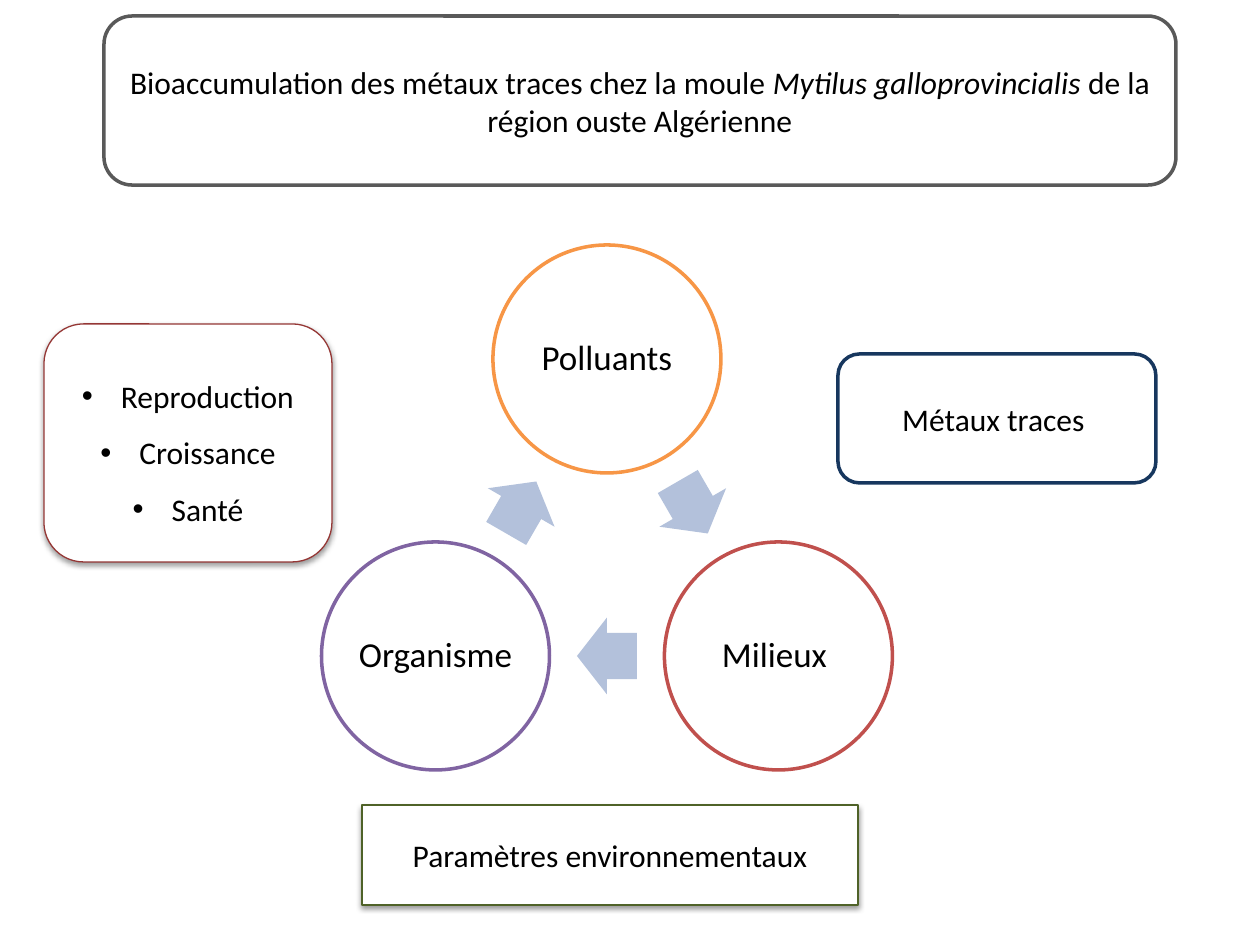
import math
from dataclasses import dataclass

import lxml.etree
import pptx
import pptx.dml.color
import pptx.enum.shapes
import pptx.enum.text
import pptx.oxml
import pptx.oxml.ns
import pptx.util

EMU_PER_PX = 914400 / 126
SHAPES = pptx.enum.shapes.MSO_SHAPE


@dataclass(frozen=True)
class Theme:
    font: str = "Calibri"
    body_size: int = 18
    circle_size: int = 20
    text: str = "000000"
    surface: str = "FFFFFF"
    title_line: str = "595959"
    metals_line: str = "17375E"
    parameters_line: str = "4F6228"
    effects_line: str = "953735"
    pollutants: str = "F79646"
    environment: str = "C0504D"
    organism: str = "8064A2"
    arrow: str = "B3C1DB"
    thick: float = 2
    thin: float = 0.75


THEME = Theme()


def px(length):
    return pptx.util.Emu(round(length * EMU_PER_PX))


def color(value):
    return pptx.dml.color.RGBColor.from_string(value)


def set_attributes(target, values):
    for name, value in values.items():
        setattr(target, name, value)


def add_shape(slide, kind, box, fill, line=None, line_width=THEME.thick):
    shape = slide.shapes.add_shape(kind, *map(px, box))
    shape.shadow.inherit = False
    shape.fill.solid()
    shape.fill.fore_color.rgb = color(fill)
    if line:
        shape.line.color.rgb = color(line)
        shape.line.width = pptx.util.Pt(line_width)
    else:
        shape.line.fill.background()
    return shape


def add_soft_shadow(shape):
    effects = shape._element.spPr.find(pptx.oxml.ns.qn("a:effectLst"))
    effects.append(pptx.oxml.parse_xml(
        f'<a:outerShdw {pptx.oxml.ns.nsdecls("a")} blurRad="40000" dist="20000" '
        'dir="5400000" rotWithShape="0">'
        '<a:srgbClr val="000000"><a:alpha val="38000"/></a:srgbClr></a:outerShdw>'))


def add_bullet(paragraph):
    properties = paragraph._p.get_or_add_pPr()
    indent = round(0.31 * 914400)
    properties.set("marL", str(indent))
    properties.set("indent", str(-indent))
    for tag, name, value in (("a:buFont", "typeface", "Arial"), ("a:buChar", "char", "•")):
        lxml.etree.SubElement(properties, pptx.oxml.ns.qn(tag)).set(name, value)


def write_text(shape, paragraphs, size=THEME.body_size, line_spacing=None, bullets=False):
    """Fill a shape with paragraphs, each a list of (text, italic) runs."""
    frame = shape.text_frame
    set_attributes(frame, {
        "word_wrap": True,
        "vertical_anchor": pptx.enum.text.MSO_ANCHOR.MIDDLE,
    })
    for index, runs in enumerate(paragraphs):
        paragraph = frame.add_paragraph() if index else frame.paragraphs[0]
        set_attributes(paragraph, {
            "alignment": pptx.enum.text.PP_ALIGN.CENTER,
            "line_spacing": line_spacing,
        })
        if bullets:
            add_bullet(paragraph)
        for text, italic in runs:
            run = paragraph.add_run()
            run.text = text
            set_attributes(run.font, {
                "name": THEME.font,
                "size": pptx.util.Pt(size),
                "italic": italic,
            })
            run.font.color.rgb = color(THEME.text)


def add_cycle(slide):
    """Place three circles on a ring, with an arrow midway between neighbours."""
    center_x, center_y, radius, diameter = 607, 557, 198, 228
    arrow_width, arrow_height = 60, 77
    steps = (("Polluants", THEME.pollutants), ("Milieux ", THEME.environment),
             ("Organisme", THEME.organism))
    turn = 360 / len(steps)
    centers = []
    for index, (label, line) in enumerate(steps):
        angle = math.radians(index * turn - 90)
        x = center_x + radius * math.cos(angle)
        y = center_y + radius * math.sin(angle)
        centers.append((x, y))
        circle = add_shape(slide, SHAPES.OVAL,
                           (x - diameter / 2, y - diameter / 2, diameter, diameter),
                           THEME.surface, line)
        margins = ("margin_left", "margin_top", "margin_right", "margin_bottom")
        set_attributes(circle.text_frame, dict.fromkeys(margins, 0))
        write_text(circle, [[(label, False)]], THEME.circle_size, 0.9)

    for index, (x, y) in enumerate(centers):
        next_x, next_y = centers[(index + 1) % len(centers)]
        arrow = add_shape(slide, SHAPES.RIGHT_ARROW,
                          ((x + next_x - arrow_width) / 2, (y + next_y - arrow_height) / 2,
                           arrow_width, arrow_height), THEME.arrow)
        arrow.adjustments[0] = 0.6
        arrow.adjustments[1] = 0.5
        arrow.rotation = turn / 2 + index * turn


def add_boxes(slide):
    title = add_shape(slide, SHAPES.ROUNDED_RECTANGLE, (104, 16, 1072, 169),
                      THEME.surface, THEME.title_line)
    write_text(title, [[
        ("Bioaccumulation des métaux traces chez la moule ", False),
        ("Mytilus galloprovincialis ", True),
        ("de la région ouste Algérienne", False),
    ]])

    metals = add_shape(slide, SHAPES.ROUNDED_RECTANGLE, (838, 354, 318, 129),
                       THEME.surface, THEME.metals_line)
    write_text(metals, [[("Métaux traces ", False)]])

    parameters = add_shape(slide, SHAPES.RECTANGLE, (362, 805, 496, 100),
                           THEME.surface, THEME.parameters_line, THEME.thin)
    add_soft_shadow(parameters)
    write_text(parameters, [[("Paramètres environnementaux", False)]])

    effects = add_shape(slide, SHAPES.ROUNDED_RECTANGLE, (44, 324, 288, 238),
                        THEME.surface, THEME.effects_line, THEME.thin)
    add_soft_shadow(effects)
    write_text(effects, [[(effect, False)] for effect in ("Reproduction", "Croissance", "Santé")],
               line_spacing=1.5, bullets=True)


def main():
    presentation = pptx.Presentation()
    set_attributes(presentation, {"slide_width": px(1260), "slide_height": px(945)})
    slide = presentation.slides.add_slide(presentation.slide_layouts[6])
    add_cycle(slide)
    add_boxes(slide)
    presentation.save("out.pptx")


if __name__ == "__main__":
    main()
